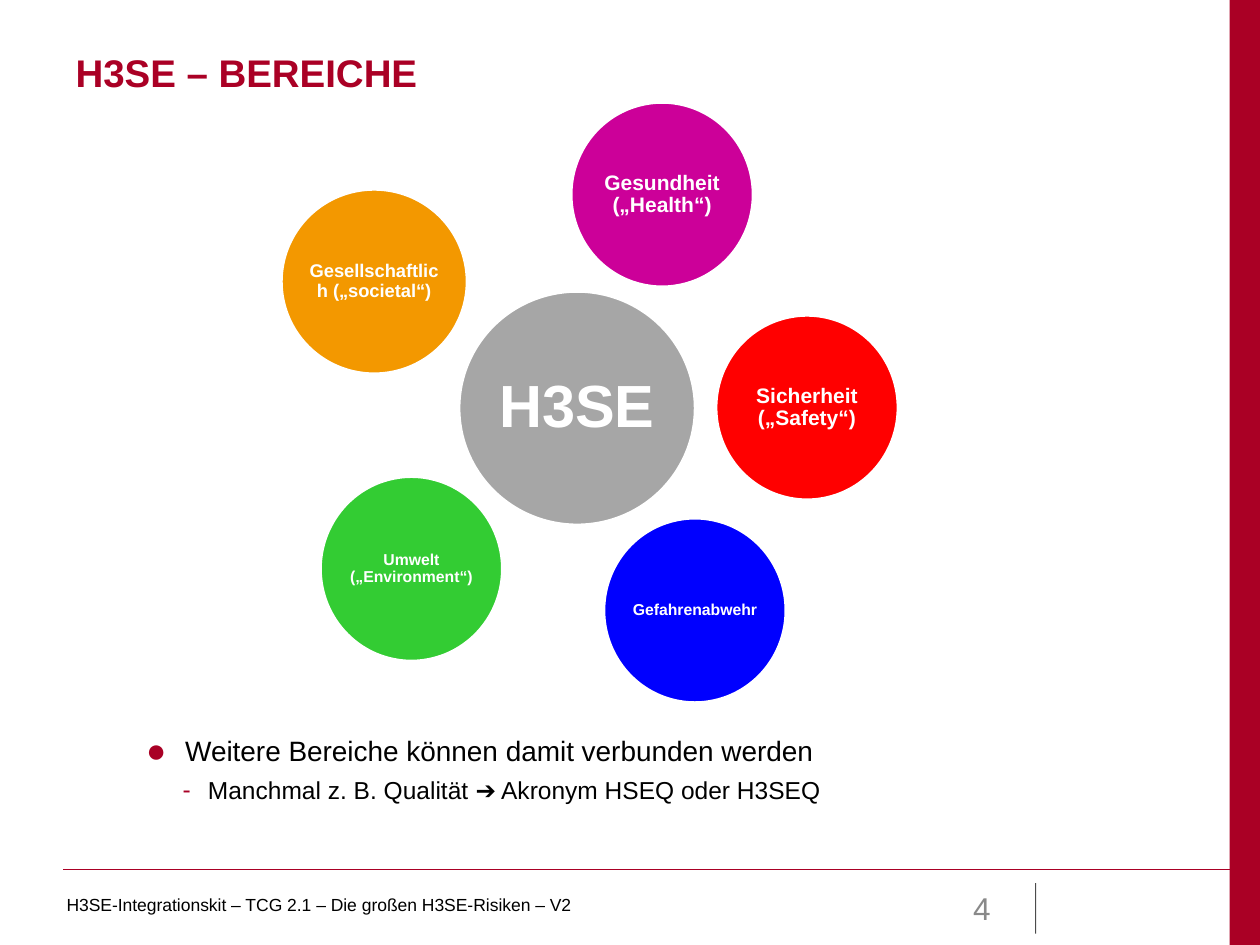
"""Build the slide showing the areas of H3SE around a central circle."""
from lxml import etree
from pptx import Presentation
from pptx import util as u
from pptx.dml.color import RGBColor
from pptx.enum import shapes, text
from pptx.oxml.ns import qn

COLORS = {
    "brand": "AA0025", "bullet": "A90025", "white": "FFFFFF", "black": "000000",
    "number": "898989", "core": "A6A6A6", "health": "CC0099", "safety": "FF0000",
    "environment": "33CC33", "security": "0000FF", "society": "F39800",
}


def rgb(name):
    return RGBColor.from_string(COLORS[name])


def write(p, words, size, color="black", bold=False, align=text.PP_ALIGN.LEFT, spacing=1.0):
    p.alignment = align
    p.line_spacing = spacing
    r = p.add_run()
    r.text = words
    r.font.name = "Arial"
    r.font.size = u.Pt(size)
    r.font.bold = bold
    r.font.color.rgb = rgb(color)


prs = Presentation()
prs.slide_width, prs.slide_height = u.Inches(10), u.Inches(7.5)
s = prs.slides.add_slide(prs.slide_layouts[1])
title, body = s.placeholders

lines = [
    (0.5, 6.9, 10, 6.9, "brand", 0.75, None),
    (8.22, 7.01, 8.22, 7.41, "black", 0.5, "70000"),
]
for x1, y1, x2, y2, color, width, alpha in lines:
    line = s.shapes.add_connector(
        shapes.MSO_CONNECTOR.STRAIGHT, u.Inches(x1), u.Inches(y1), u.Inches(x2), u.Inches(y2))
    line.line.color.rgb = rgb(color)
    line.line.width = u.Pt(width)
    spPr = line._element.spPr
    etree.SubElement(spPr, qn("a:effectLst"))
    if alpha:
        etree.SubElement(spPr.find(".//" + qn("a:srgbClr")), qn("a:alpha"), val=alpha)

bar = s.shapes.add_shape(
    shapes.MSO_SHAPE.RECTANGLE, u.Inches(9.76), 0, u.Inches(0.24), prs.slide_height)
bar.shadow.inherit = False
bar.fill.solid()
bar.fill.fore_color.rgb = rgb("brand")
bar.line.fill.background()

circles = [
    ("H3SE", 3.64, 2.31, 1.88, 1.86, "core", 34),
    ("Gesundheit („Health“)", 4.53, 0.81, 1.45, 1.47, "health", 12),
    ("Sicherheit („Safety“)", 5.68, 2.5, 1.45, 1.47, "safety", 12),
    ("Umwelt („Environment“)", 2.54, 3.78, 1.45, 1.47, "environment", 9),
    ("Gefahrenabwehr", 4.79, 4.11, 1.45, 1.47, "security", 9),
    ("Gesellschaftlich („societal“)", 2.23, 1.5, 1.48, 1.47, "society", 10.5),
]
for label, x, y, w, h, color, size in circles:
    sp = s.shapes.add_shape(
        shapes.MSO_SHAPE.OVAL, u.Inches(x), u.Inches(y), u.Inches(w), u.Inches(h))
    sp.shadow.inherit = False
    sp.fill.solid()
    sp.fill.fore_color.rgb = rgb(color)
    sp.line.color.rgb = rgb("white")
    sp.line.width = u.Pt(2)
    tf = sp.text_frame
    tf.word_wrap = True
    tf.vertical_anchor = text.MSO_ANCHOR.MIDDLE
    tf.margin_left = tf.margin_right = tf.margin_top = tf.margin_bottom = u.Inches(0.01)
    write(tf.paragraphs[0], label, size, "white", True, text.PP_ALIGN.CENTER, 0.9)

title.left, title.top, title.width, title.height = map(u.Inches, (0.5, 0.3, 9.5, 0.54))
title.text_frame.vertical_anchor = text.MSO_ANCHOR.MIDDLE
write(title.text_frame.paragraphs[0], "H3SE – BEREICHE", 22, "brand", True)

body.left, body.top, body.width, body.height = map(u.Inches, (1.06, 5.8, 8.15, 1.16))
tf = body.text_frame
tf.auto_size = text.MSO_AUTO_SIZE.NONE
points = [
    ("Weitere Bereiche können damit verbunden werden", 16, "●", "120000", 0.31, -0.31),
    ("Manchmal z.\u00a0B. Qualität ➔ Akronym HSEQ oder H3SEQ", 14, "-", "100000", 0.49, -0.2),
]
for level, (words, size, mark, scale, margin, indent) in enumerate(points):
    p = tf.add_paragraph() if level else tf.paragraphs[0]
    p.level = level
    pPr = p._p.get_or_add_pPr()
    pPr.set("marL", str(u.Inches(margin)))
    pPr.set("indent", str(u.Inches(indent)))
    bullet_color = etree.SubElement(pPr, qn("a:buClr"))
    etree.SubElement(bullet_color, qn("a:srgbClr"), val=COLORS["bullet"])
    etree.SubElement(pPr, qn("a:buSzPct"), val=scale)
    etree.SubElement(pPr, qn("a:buFont"), typeface="Arial")
    etree.SubElement(pPr, qn("a:buChar"), char=mark)
    p.space_before = u.Pt(3 if level else 0)
    p.space_after = u.Pt(3)
    write(p, words, size, spacing=0.9)

footers = [
    ("H3SE-Integrationskit – TCG 2.1 – Die großen H3SE-Risiken – V2", 0.43, 7.05, 7.26,
     10, "black", text.PP_ALIGN.LEFT, text.MSO_ANCHOR.TOP),
    ("4", 7.17, 7.01, 0.79, 18, "number", text.PP_ALIGN.RIGHT, text.MSO_ANCHOR.MIDDLE),
]
for words, x, y, w, size, color, align, anchor in footers:
    sp = s.shapes.add_textbox(u.Inches(x), u.Inches(y), u.Inches(w), u.Inches(0.4))
    sp.text_frame.word_wrap = True
    sp.text_frame.vertical_anchor = anchor
    write(sp.text_frame.paragraphs[0], words, size, color, align=align)

prs.save("out.pptx")
